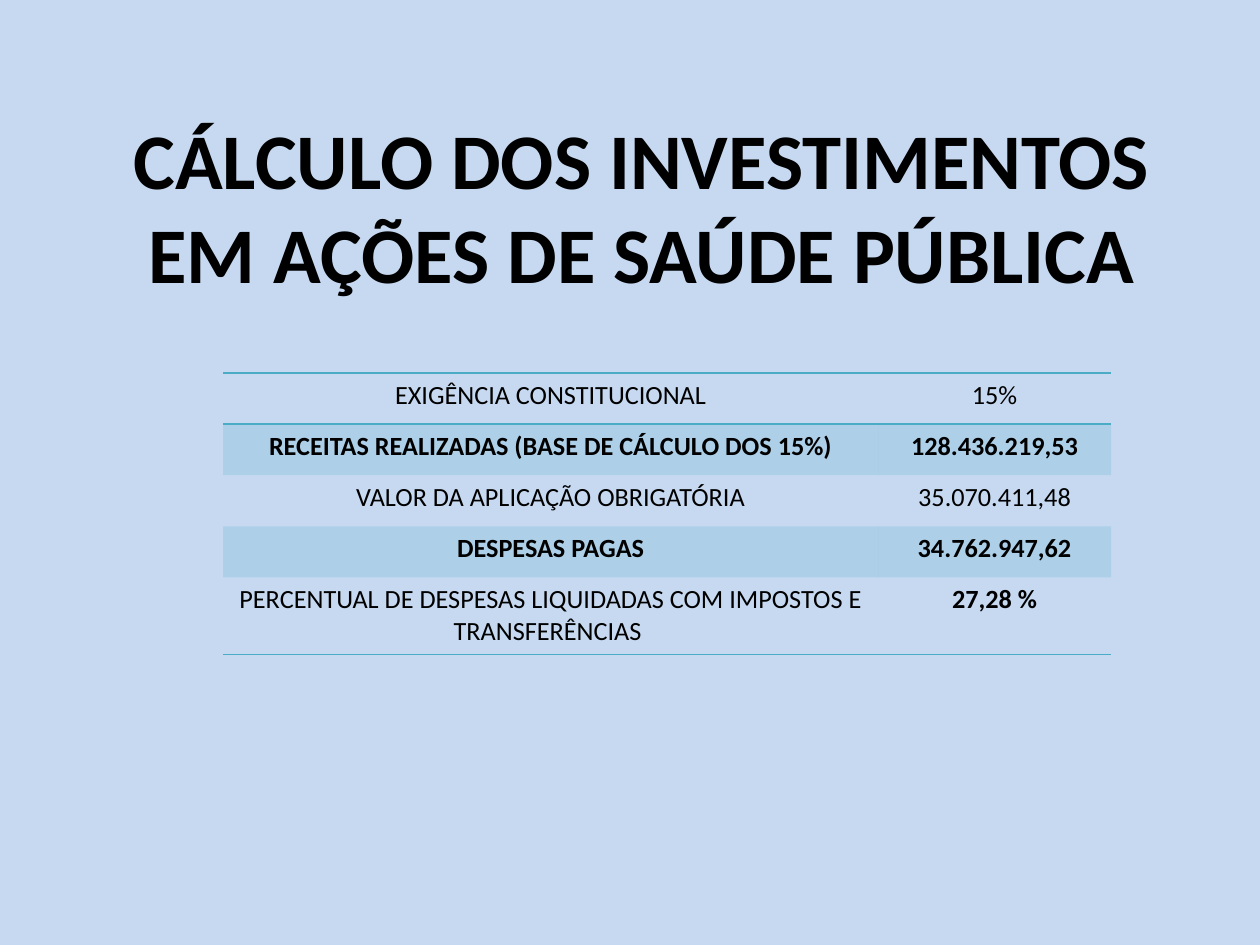
from lxml.etree import SubElement
from pptx import Presentation
from pptx.dml.color import RGBColor
from pptx.enum.text import MSO_ANCHOR as Anchor, MSO_AUTO_SIZE as AutoSize, PP_ALIGN as Align
from pptx.oxml import parse_xml
from pptx.oxml.ns import nsdecls, qn
from pptx.util import Cm, Pt

ACCENT = "4BACC6"
PLAIN_STYLE = "{2D5ABB26-0587-4C30-8999-92F81FD0307C}"
ROWS = [
    ("EXIGÊNCIA CONSTITUCIONAL", "15%"),
    ("RECEITAS REALIZADAS (BASE DE CÁLCULO DOS 15%)", "128.436.219,53"),
    ("VALOR DA APLICAÇÃO OBRIGATÓRIA", "35.070.411,48"),
    ("DESPESAS PAGAS", "34.762.947,62"),
    ("PERCENTUAL DE DESPESAS LIQUIDADAS COM IMPOSTOS E TRANSFERÊNCIAS ", "27,28 %"),
]


def color(value):
    """Turn a hex string into a colour."""
    return RGBColor.from_string(value)


def write_text(frame, text, size, bold):
    """Write one centred paragraph in black Calibri."""
    frame.text = text
    paragraph = frame.paragraphs[0]
    paragraph.alignment = Align.CENTER
    font = paragraph.font
    font.name, font.size, font.bold = "Calibri", Pt(size), bold
    font.color.rgb = color("000000")


def add_title(slide, text):
    """Place and format the slide title."""
    title = slide.shapes.title
    title.left, title.top, title.width, title.height = Cm(1.5), Cm(1.93), Cm(22.86), Cm(4.4)
    frame = title.text_frame
    frame.word_wrap, frame.auto_size = True, AutoSize.NONE
    frame.vertical_anchor = Anchor.MIDDLE
    write_text(frame, text, 45, True)


def fill_cell(cell, shaded):
    """Give a cell a translucent accent fill, or none."""
    if not shaded:
        cell.fill.background()
        return
    cell.fill.solid()
    cell.fill.fore_color.rgb = color(ACCENT)
    srgb = next(cell._tc.tcPr.iter(qn("a:srgbClr")))
    SubElement(srgb, qn("a:alpha")).set("val", "20000")


def add_borders(cell, sides):
    """Draw accent lines on the given sides, listed in schema order."""
    properties = cell._tc.get_or_add_tcPr()
    for position, side in enumerate(sides):
        line = parse_xml(
            f'<a:ln{side} {nsdecls("a")} w="{Pt(1)}"><a:solidFill>'
            f'<a:srgbClr val="{ACCENT}"/></a:solidFill></a:ln{side}>'
        )
        properties.insert(position, line)


def add_spending_table(slide):
    """Add the table with shaded alternate rows and ruled first and last rows."""
    last = len(ROWS) - 1
    frame = slide.shapes.add_table(len(ROWS), 2, Cm(4.5), Cm(7.52), Cm(17.9), Cm(5.67))
    table = frame.table
    table.first_row = table.horz_banding = False
    table._tbl.tblPr.find(qn("a:tableStyleId")).text = PLAIN_STYLE
    table.columns[0].width, table.columns[1].width = Cm(13.2), Cm(4.7)
    borders = {0: "TB", last: "B"}
    for row, texts in enumerate(ROWS):
        table.rows[row].height = Cm(1.55 if row == last else 1.03)
        shaded = row % 2 == 1
        for column, text in enumerate(texts):
            cell = table.cell(row, column)
            write_text(cell.text_frame, text, 15, shaded or (row, column) == (last, 1))
            fill_cell(cell, shaded)
            add_borders(cell, borders.get(row, ""))


def main():
    """Build and save the slide."""
    presentation = Presentation()
    presentation.slide_width, presentation.slide_height = Cm(25.4), Cm(19.05)
    slide = presentation.slides.add_slide(presentation.slide_layouts[5])
    slide.background.fill.solid()
    slide.background.fill.fore_color.rgb = color("C6D9F1")
    add_title(slide, "CÁLCULO DOS INVESTIMENTOS EM AÇÕES DE SAÚDE PÚBLICA")
    add_spending_table(slide)
    presentation.save("out.pptx")


if __name__ == "__main__":
    main()
